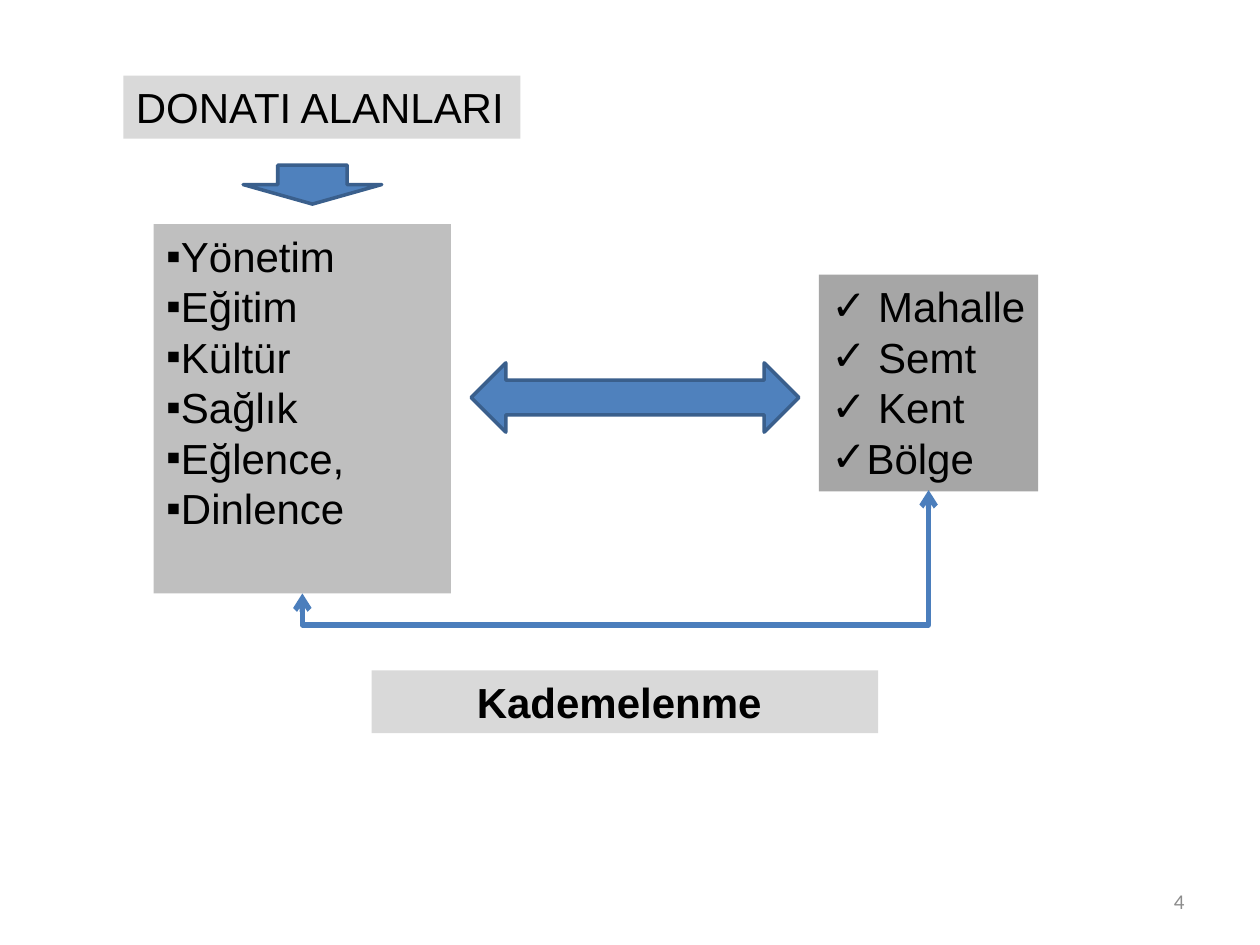
"""Build the slide on facility areas and their levels."""
import dataclasses
import typing

import lxml.etree
import pptx
import pptx.dml.color
import pptx.enum.shapes
import pptx.enum.text
import pptx.oxml.ns
import pptx.util

Inches = pptx.util.Inches
qn = pptx.oxml.ns.qn
Align = pptx.enum.text.PP_ALIGN
Anchor = pptx.enum.text.MSO_ANCHOR
Shape = pptx.enum.shapes.MSO_SHAPE


@dataclasses.dataclass(frozen=True)
class Theme:
    black: str = "000000"
    pale: str = "D9D9D9"
    grey: str = "BFBFBF"
    dark: str = "A6A6A6"
    number: str = "8C8C8C"
    arrow: str = "4F81BD"
    outline: str = "3A5F8C"
    link: str = "4B7EBC"
    font: str = "Arial"
    number_font: str = "Calibri"
    body_size: int = 24
    number_size: int = 12
    outline_width: int = 2
    link_width: int = 3


class Area(typing.NamedTuple):
    left: float
    top: float
    width: float
    height: float

    def lengths(self) -> list:
        return [Inches(value) for value in self]


class Panel(typing.NamedTuple):
    area: Area
    lines: list[str]
    fill: str
    style: dict


class BlockArrow(typing.NamedTuple):
    kind: Shape
    area: Area


THEME = Theme()
PANELS = [
    Panel(Area(0.98, 0.6, 3.15, 0.5), ["DONATI ALANLARI"], THEME.pale, {"wrap": False}),
    Panel(Area(1.22, 1.78, 2.36, 2.93),
          ["Yönetim", "Eğitim", "Kültür", "Sağlık", "Eğlence,", "Dinlence"],
          THEME.grey, {"bullet": "▪"}),
    Panel(Area(6.5, 2.18, 1.74, 1.72), [" Mahalle", " Semt", " Kent", "Bölge"],
          THEME.dark, {"bullet": "✓", "wrap": False}),
    Panel(Area(2.95, 5.32, 4.02, 0.5), ["Kademelenme "], THEME.pale,
          {"align": Align.CENTER, "bold": True}),
]
ARROWS = [
    BlockArrow(Shape.DOWN_ARROW, Area(1.93, 1.31, 1.1, 0.31)),
    BlockArrow(Shape.LEFT_RIGHT_ARROW, Area(3.74, 2.88, 2.6, 0.55)),
]


def rgb(value: str) -> pptx.dml.color.RGBColor:
    return pptx.dml.color.RGBColor.from_string(value)


def add_text(page, area: Area, lines: list[str], *, fill: str | None = None,
             bullet: str | None = None, align: Align = Align.LEFT,
             anchor: Anchor = Anchor.TOP, bold: bool = False, wrap: bool = True,
             font: str = THEME.font, size: int = THEME.body_size,
             color: str = THEME.black) -> None:
    box = page.shapes.add_textbox(*area.lengths())
    if fill:
        box.fill.solid()
        box.fill.fore_color.rgb = rgb(fill)
    frame = box.text_frame
    frame.word_wrap = wrap
    frame.vertical_anchor = anchor
    for index, line in enumerate(lines):
        para = frame.add_paragraph() if index else frame.paragraphs[0]
        para.alignment = align
        if bullet:
            properties = para._p.get_or_add_pPr()
            lxml.etree.SubElement(properties, qn("a:buFont"), typeface=font)
            lxml.etree.SubElement(properties, qn("a:buChar"), char=bullet)
        span = para.add_run()
        span.text = line
        span.font.name = font
        span.font.size = pptx.util.Pt(size)
        span.font.bold = bold
        span.font.color.rgb = rgb(color)


def add_block_arrow(page, arrow: BlockArrow) -> None:
    shape = page.shapes.add_shape(arrow.kind, *arrow.area.lengths())
    shape.shadow.inherit = False
    shape.fill.solid()
    shape.fill.fore_color.rgb = rgb(THEME.arrow)
    shape.line.color.rgb = rgb(THEME.outline)
    shape.line.width = pptx.util.Pt(THEME.outline_width)


def add_link(page, start: tuple[float, float], end: tuple[float, float],
             drop: float) -> None:
    """Draw a two-headed elbow that leaves and arrives from below."""
    across, rise = end[0] - start[0], start[1] - end[1]
    middle_x, middle_y = (start[0] + end[0]) / 2, (start[1] + end[1]) / 2
    link = page.shapes.add_connector(
        pptx.enum.shapes.MSO_CONNECTOR.ELBOW,
        Inches(middle_x + rise / 2), Inches(middle_y + across / 2),
        Inches(middle_x - rise / 2), Inches(middle_y - across / 2))
    link.line.color.rgb = rgb(THEME.link)
    link.line.width = pptx.util.Pt(THEME.link_width)
    properties = link._element.spPr
    properties.find(qn("a:xfrm")).set("rot", str(90 * 60000))
    guides = properties.find(qn("a:prstGeom")).get_or_add_avLst()
    lxml.etree.SubElement(guides, qn("a:gd"), name="adj1",
                          fmla=f"val {round(-drop / rise * 100000)}")
    outline = properties.find(qn("a:ln"))
    for tag in ("a:headEnd", "a:tailEnd"):
        lxml.etree.SubElement(outline, qn(tag), type="arrow")
    lxml.etree.SubElement(properties, qn("a:effectLst"))


def main() -> None:
    deck = pptx.Presentation()
    deck.slide_width, deck.slide_height = Inches(10), Inches(7.5)
    page = deck.slides.add_slide(deck.slide_layouts[6])
    for panel in PANELS:
        add_text(page, panel.area, panel.lines, fill=panel.fill, **panel.style)
    for arrow in ARROWS:
        add_block_arrow(page, arrow)
    add_link(page, (2.4, 4.71), (7.37, 3.89), drop=0.25)
    add_text(page, Area(7.17, 6.95, 2.33, 0.4), ["4"], align=Align.RIGHT,
             anchor=Anchor.MIDDLE, font=THEME.number_font,
             size=THEME.number_size, color=THEME.number)
    deck.save("out.pptx")


if __name__ == "__main__":
    main()
